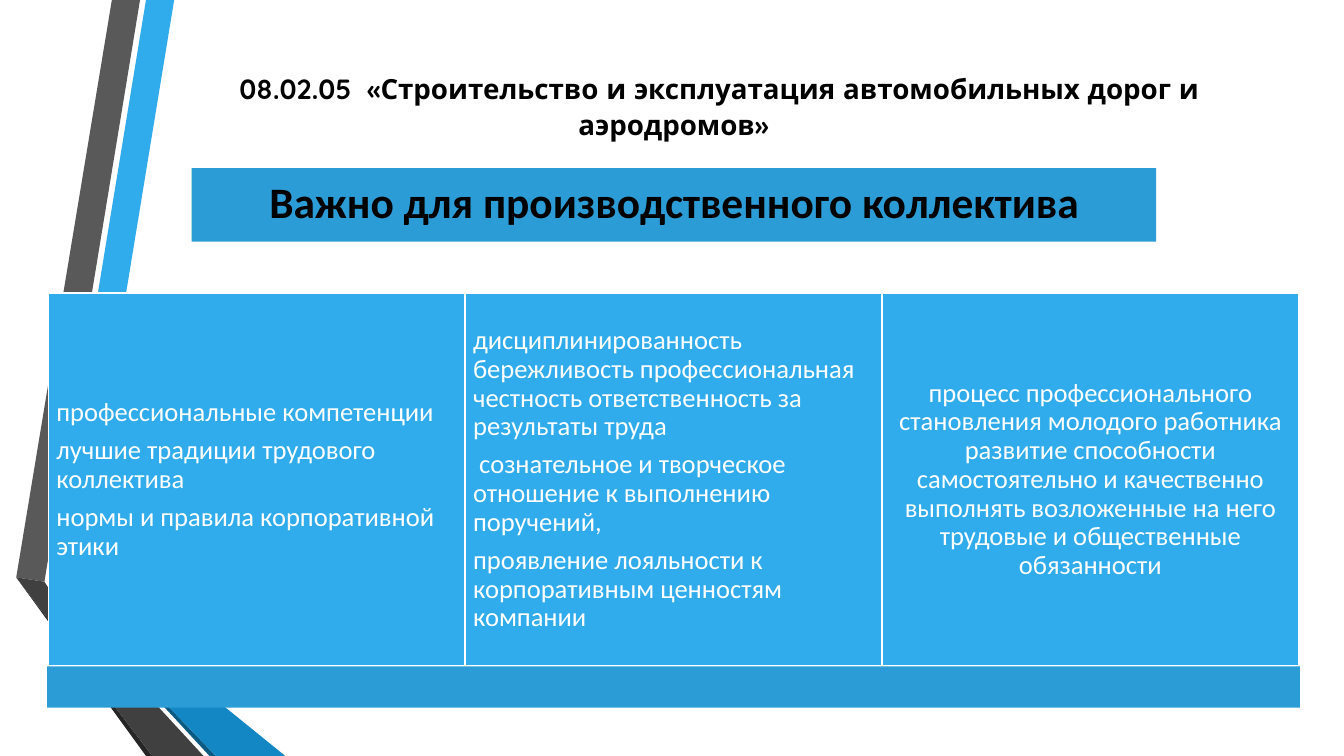
from pptx import Presentation
from pptx.dml.color import RGBColor
from pptx.enum.shapes import MSO_SHAPE as Preset
from pptx.enum.text import MSO_ANCHOR as Anchor, PP_ALIGN as Align
from pptx.util import Cm, Pt

COLORS = {
    "sky": "30ACEC", "steel": "2C9CD6", "ocean": "1287C3", "navy": "0C5A82",
    "gray": "595959", "charcoal": "404040", "soot": "262626",
    "black": "000000", "white": "FFFFFF",
}
SLIDE_W, SLIDE_H = 33.87, 19.05

# Ribbon corners in centimetres, from back to front
RIBBONS = [
    ("sky", [(1.27, 14.68), (1.96, 14.81), (4.39, 0), (3.68, 0)]),
    ("gray", [(3.53, 0), (2.82, 0), (0.41, 14.55), (1.12, 14.66)]),
    ("soot", [(0.41, 14.55), (3.68, SLIDE_H), (3.84, SLIDE_H)]),
    ("navy", [(1.27, 14.71), (5.28, SLIDE_H), (5.44, SLIDE_H)]),
    ("ocean", [(1.27, 14.71), (5.44, SLIDE_H), (7.19, SLIDE_H), (1.96, 14.81), (1.27, 14.68)]),
    ("charcoal", [(5.13, SLIDE_H), (1.22, 14.81), (1.12, 14.66), (0.41, 14.55), (3.84, SLIDE_H)]),
]
PROGRAM = "08.02.05  «Строительство и эксплуатация автомобильных дорог и аэродромов»"
HEADING = "Важно для производственного коллектива"
QUALITIES = [
    (Align.LEFT, [
        "профессиональные компетенции",
        "лучшие традиции трудового коллектива",
        "нормы и правила корпоративной этики",
    ]),
    (Align.LEFT, [
        "дисциплинированность бережливость профессиональная честность "
        "ответственность за результаты труда",
        " сознательное и творческое отношение к выполнению поручений,",
        "проявление лояльности к корпоративным ценностям компании",
    ]),
    (Align.CENTER, [
        "процесс профессионального становления молодого работника развитие "
        "способности самостоятельно и качественно выполнять возложенные на него "
        "трудовые и общественные обязанности",
    ]),
]
PROGRAM_FONT = {"name": "Quicksand", "size": Pt(19.8), "bold": True}
HEADING_FONT = {"name": "Calibri", "size": Pt(31), "bold": True}
QUALITY_FONT = {"name": "Calibri", "size": Pt(19), "bold": False}


def rgb(color):
    return RGBColor.from_string(COLORS[color])


def set_all(target, values):
    for attribute, value in values.items():
        setattr(target, attribute, value)


def paint(shape, fill, line=None):
    shape.shadow.inherit = False
    shape.fill.solid()
    shape.fill.fore_color.rgb = rgb(fill)
    if line:
        shape.line.color.rgb = rgb(line)
        shape.line.width = Pt(1.25)
    else:
        shape.line.fill.background()


def write(shape, texts, font, color, paragraph_format, frame_format):
    frame = shape.text_frame
    set_all(frame, {"word_wrap": True, **frame_format})
    for index, text in enumerate(texts):
        paragraph = frame.paragraphs[0] if index == 0 else frame.add_paragraph()
        set_all(paragraph, paragraph_format)
        run = paragraph.add_run()
        run.text = text
        set_all(run.font, font)
        run.font.color.rgb = rgb(color)


def insets(size):
    return {f"margin_{side}": Cm(size) for side in ("left", "top", "right", "bottom")}


def add_block(slide, box, fill, line=None):
    block = slide.shapes.add_shape(Preset.RECTANGLE, *map(Cm, box))
    paint(block, fill, line)
    return block


def add_ribbons(slide):
    for color, corners in RIBBONS:
        start, *others = [(round(x * 100), round(y * 100)) for x, y in corners]
        outline = slide.shapes.build_freeform(*start, scale=Cm(1) / 100)
        outline.add_line_segments(others, close=True)
        paint(outline.convert_to_shape(), color)


def add_program(slide, box):
    """Centred programme name whose first line is indented."""
    program = slide.shapes.add_textbox(*map(Cm, box))
    write(program, [PROGRAM], PROGRAM_FONT, "black",
          {"alignment": Align.CENTER, "line_spacing": 1.07},
          {**insets(1.5), "margin_top": Cm(1.75), "margin_bottom": 0,
           "vertical_anchor": Anchor.TOP})
    program.text_frame.paragraphs[0]._p.get_or_add_pPr().set("indent", str(Cm(2.3)))


def add_heading(slide, box):
    write(add_block(slide, box, "steel"), [HEADING], HEADING_FONT, "black",
          {"alignment": Align.CENTER, "line_spacing": 0.9},
          {**insets(0.33), "vertical_anchor": Anchor.MIDDLE})


def add_qualities(slide, box):
    """Equal columns standing on a bar."""
    left, top, width, height = box
    bar_height, edge = 1.04, 0.03
    column_width = (width - 2 * edge) / len(QUALITIES)
    column_height = height - bar_height
    for index, (alignment, texts) in enumerate(QUALITIES):
        column_box = (left + edge + index * column_width, top, column_width, column_height)
        write(add_block(slide, column_box, "sky", "white"), texts, QUALITY_FONT, "white",
              {"alignment": alignment, "line_spacing": 0.9, "space_after": Pt(6.65)},
              {**insets(0.2), "vertical_anchor": Anchor.MIDDLE})
    add_block(slide, (left, top + column_height, width, bar_height), "steel")


def main():
    deck = Presentation()
    deck.slide_width, deck.slide_height = Cm(SLIDE_W), Cm(SLIDE_H)
    slide = deck.slides.add_slide(deck.slide_layouts[6])
    add_ribbons(slide)
    add_program(slide, (1.19, 0, 31.57, 3.58))
    add_heading(slide, (4.83, 4.24, 24.31, 1.85))
    add_qualities(slide, (1.19, 7.39, 31.57, 10.44))
    deck.save("out.pptx")


if __name__ == "__main__":
    main()
